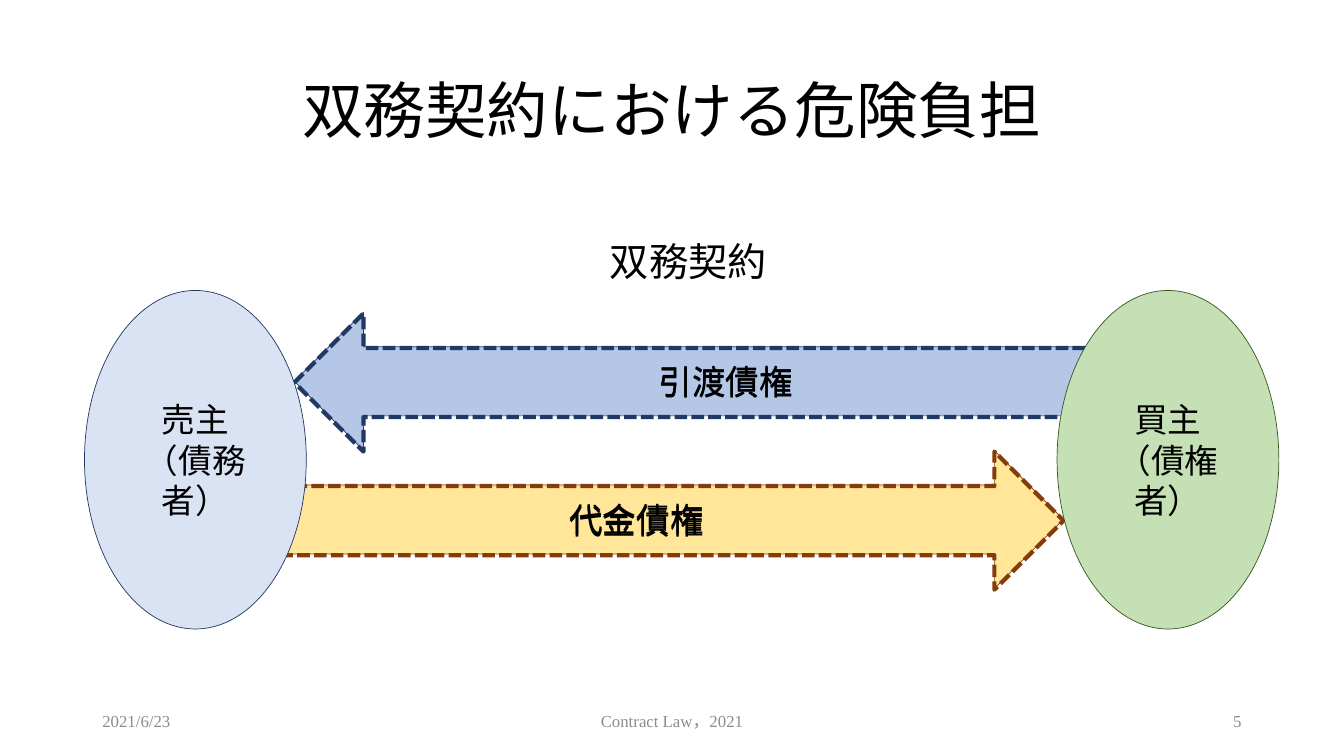
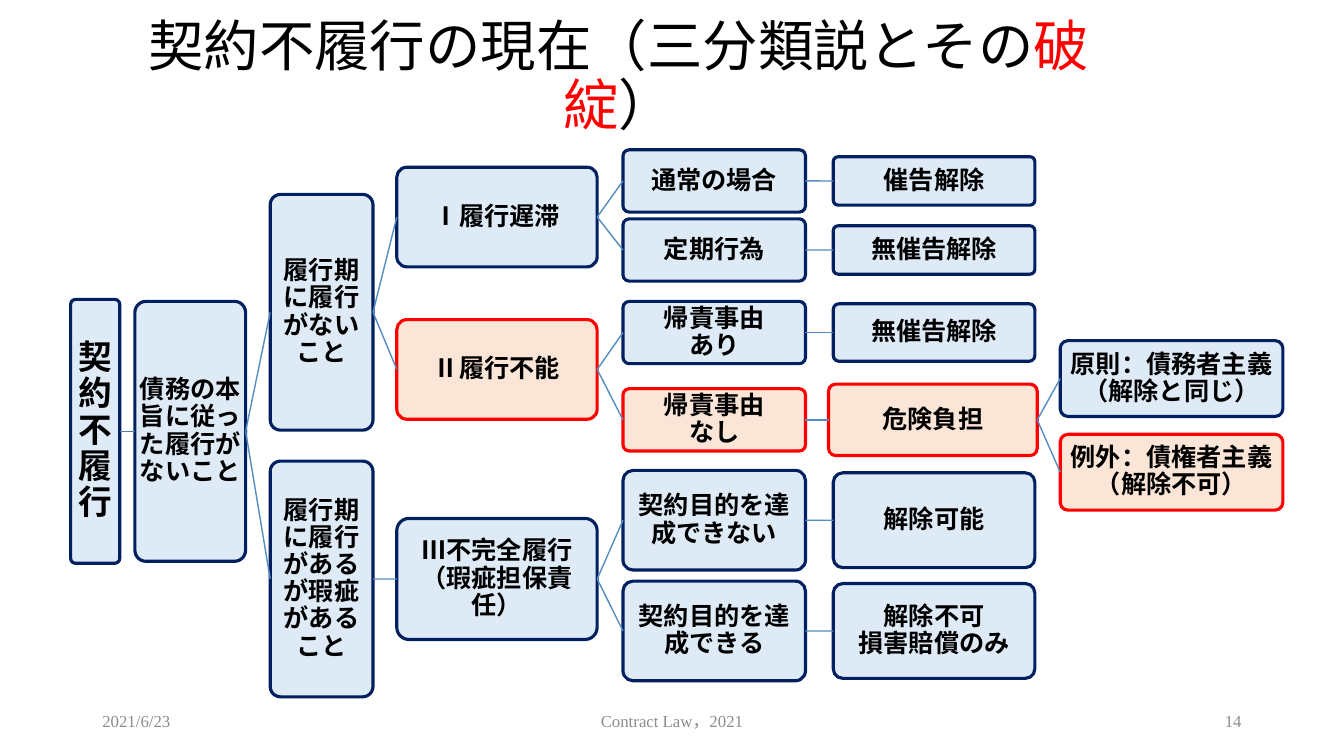
from lxml.etree import SubElement
from pptx import Presentation
from pptx.dml.color import RGBColor
from pptx.enum.dml import MSO_LINE
from pptx.enum.shapes import MSO_CONNECTOR, MSO_SHAPE
from pptx.enum.text import MSO_ANCHOR, MSO_AUTO_SIZE, PP_ALIGN
from pptx.oxml.ns import qn
from pptx.util import Cm, Pt

COLOURS = {
    "text": "000000", "footer": "8C8C8C", "alert": "FF0000",
    "seller": "DAE3F3", "delivery": "B4C7E7", "navy": "203864",
    "buyer": "C5E0B4", "green": "385723",
    "payment": "FFE699", "brown": "843C0B",
    "node": "DEEBF7", "node_line": "002060", "alert_node": "FBE5D6",
    "stem": "497CAB", "branch": "538DC1",
}
CJK_FONT = "Noto Sans CJK JP"
BODY_FONT = "Times New Roman"


def format_text(shape, size, colour="text", font=BODY_FONT, bold=False,
                align=PP_ALIGN.CENTER, spacing=None, inset=None):
    frame = shape.text_frame
    frame.word_wrap = True
    frame.auto_size = MSO_AUTO_SIZE.NONE
    frame.vertical_anchor = MSO_ANCHOR.MIDDLE
    if inset is not None:
        frame.margin_left = frame.margin_right = Cm(inset)
        frame.margin_top = frame.margin_bottom = Cm(inset)
    for paragraph in frame.paragraphs:
        paragraph.alignment = align
        paragraph.line_spacing = spacing
        for run in paragraph.runs:
            run.font.size = Pt(size)
            run.font.bold = bold
            run.font.name = font
            run.font.color.rgb = RGBColor.from_string(COLOURS[colour])
            SubElement(run.font._element, qn("a:ea"), typeface=CJK_FONT)


def add_box(slide, kind, box, text, fill, line, width):
    shape = slide.shapes.add_shape(kind, *map(Cm, box))
    shape.shadow.inherit = False
    if fill:
        shape.fill.solid()
        shape.fill.fore_color.rgb = RGBColor.from_string(COLOURS[fill])
    else:
        shape.fill.background()
    shape.line.color.rgb = RGBColor.from_string(COLOURS[line])
    shape.line.width = Pt(width)
    shape.text_frame.paragraphs[0].text = text
    return shape


presentation = Presentation()
presentation.slide_width = Cm(33.87)
presentation.slide_height = Cm(19.05)

# Slides with titles and footers: number, title box, size, (text, colour) runs
pages = [
    ("5", (2.33, 1.01, 29.21, 3.68), 44, [("双務契約における危険負担", "text")]),
    ("14", (2.33, 1.01, 26.52, 1.91), 39.6,
     [("契約不履行の現在（三分類説とその", "text"), ("破綻", "alert"), ("）", "text")]),
]
for number, box, size, pieces in pages:
    slide = presentation.slides.add_slide(presentation.slide_layouts[5])
    title = slide.shapes.title
    title.left, title.top, title.width, title.height = map(Cm, box)
    paragraph = title.text_frame.paragraphs[0]
    for text, colour in pieces:
        paragraph.add_run().text = text
    format_text(title, size, font=CJK_FONT, spacing=0.9)
    for run, (text, colour) in zip(paragraph.runs, pieces):
        run.font.color.rgb = RGBColor.from_string(COLOURS[colour])

    for left, width, text, align in [
        (2.33, 7.62, "2021/6/23", PP_ALIGN.LEFT),
        (11.22, 11.43, "Contract Law，2021", PP_ALIGN.CENTER),
        (23.92, 7.62, number, PP_ALIGN.RIGHT),
    ]:
        footer = slide.shapes.add_textbox(Cm(left), Cm(17.66), Cm(width), Cm(1.01))
        footer.text_frame.text = text
        format_text(footer, 12, "footer", align=align)

risk_slide, tree_slide = presentation.slides

# Claims: a filled arrow under a dashed outline
for kind, left, top, width, text, fill, line in [
    (MSO_SHAPE.RIGHT_ARROW, 6.15, 11.35, 20.65, "代金債権", "payment", "brown"),
    (MSO_SHAPE.LEFT_ARROW, 7.42, 7.87, 20.88, "引渡債権", "delivery", "navy"),
]:
    for layer_fill, line_width, offset in [(fill, 0.5, 0), (None, 3, 0.03)]:
        arrow = add_box(risk_slide, kind, (left, top + offset, width, 3.48),
                        text, layer_fill, line, line_width)
        format_text(arrow, 24)
    arrow.line.dash_style = MSO_LINE.SQUARE_DOT

# Parties
for left, text, fill, line in [
    (2.13, "売主\n（債務者）", "seller", "navy"),
    (26.64, "買主\n（債権者）", "buyer", "green"),
]:
    party = add_box(risk_slide, MSO_SHAPE.OVAL, (left, 7.32, 5.59, 8.53),
                    text, fill, line, 0.5)
    format_text(party, 24)

caption = risk_slide.shapes.add_textbox(Cm(14.88), Cm(5.84), Cm(4.93), Cm(1.45))
caption.text_frame.text = "双務契約"
format_text(caption, 28)

# Classification tree: left and width of each column
columns = {
    "root": (1.78, 1.24), "breach": (3.4, 2.79), "state": (6.81, 2.59),
    "type": (10, 5.05), "case": (15.7, 4.6), "result": (21, 5.08),
    "risk": (20.88, 5.26), "rule": (26.72, 5.61),
}
# Name, parent, column, vertical centre, height, text
nodes = [
    ("root", None, "root", 10.87, 6.65, "契約不履行"),
    ("breach", "root", "breach", 10.87, 6.55, "債務の本旨に従った履行がないこと"),
    ("none", "breach", "state", 7.87, 5.94, "履行期に履行がないこと"),
    ("delay", "none", "type", 5.47, 2.51, "Ⅰ履行遅滞"),
    ("usual", "delay", "case", 4.56, 1.57, "通常の場合"),
    ("notice", "usual", "result", 4.56, 1.22, "催告解除"),
    ("fixed", "delay", "case", 6.3, 1.57, "定期行為"),
    ("fixed end", "fixed", "result", 6.3, 1.22, "無催告解除"),
    ("impossible", "none", "type", 9.31, 2.51, "Ⅱ履行不能"),
    ("fault", "impossible", "case", 8.38, 1.57, "帰責事由\nあり"),
    ("fault end", "fault", "result", 8.38, 1.45, "無催告解除"),
    ("no fault", "impossible", "case", 10.58, 1.57, "帰責事由\nなし"),
    ("risk", "no fault", "risk", 10.58, 1.8, "危険負担"),
    ("principle", "risk", "rule", 9.54, 1.91, "原則：債務者主義（解除と同じ）"),
    ("exception", "risk", "rule", 11.9, 1.91, "例外：債権者主義（解除不可）"),
    ("defect", "breach", "state", 14.59, 5.94, "履行期に履行があるが瑕疵があること"),
    ("incomplete", "defect", "type", 14.59, 3.05, "Ⅲ不完全履行\n（瑕疵担保責任）"),
    ("failed", "incomplete", "case", 13.11, 2.51, "契約目的を達成できない"),
    ("rescind", "failed", "result", 13.11, 2.39, "解除可能"),
    ("achieved", "incomplete", "case", 15.9, 2.51, "契約目的を達成できる"),
    ("damages", "achieved", "result", 15.9, 2.39, "解除不可\n損害賠償のみ"),
]
alerts = {"impossible", "no fault", "risk", "exception"}
boxes = {}
for name, parent, column, centre, height, text in nodes:
    left, width = columns[column]
    fill, line = ("alert_node", "alert") if name in alerts else ("node", "node_line")
    node = add_box(tree_slide, MSO_SHAPE.ROUNDED_RECTANGLE,
                   (left, centre - height / 2, width, height), text, fill, line, 2.25)
    node.adjustments[0] = 0.1
    format_text(node, 18 if parent else 24, bold=True, spacing=0.9, inset=0.03)
    boxes[name] = node
    if parent:
        connector = tree_slide.shapes.add_connector(MSO_CONNECTOR.STRAIGHT, 0, 0, 0, 0)
        connector.begin_connect(boxes[parent], 3)
        connector.end_connect(node, 1)
        colour = "stem" if parent == "root" else "branch"
        connector.line.color.rgb = RGBColor.from_string(COLOURS[colour])
        connector.line.width = Pt(1)
        SubElement(connector._element.spPr, qn("a:effectLst"))

presentation.save("out.pptx")
